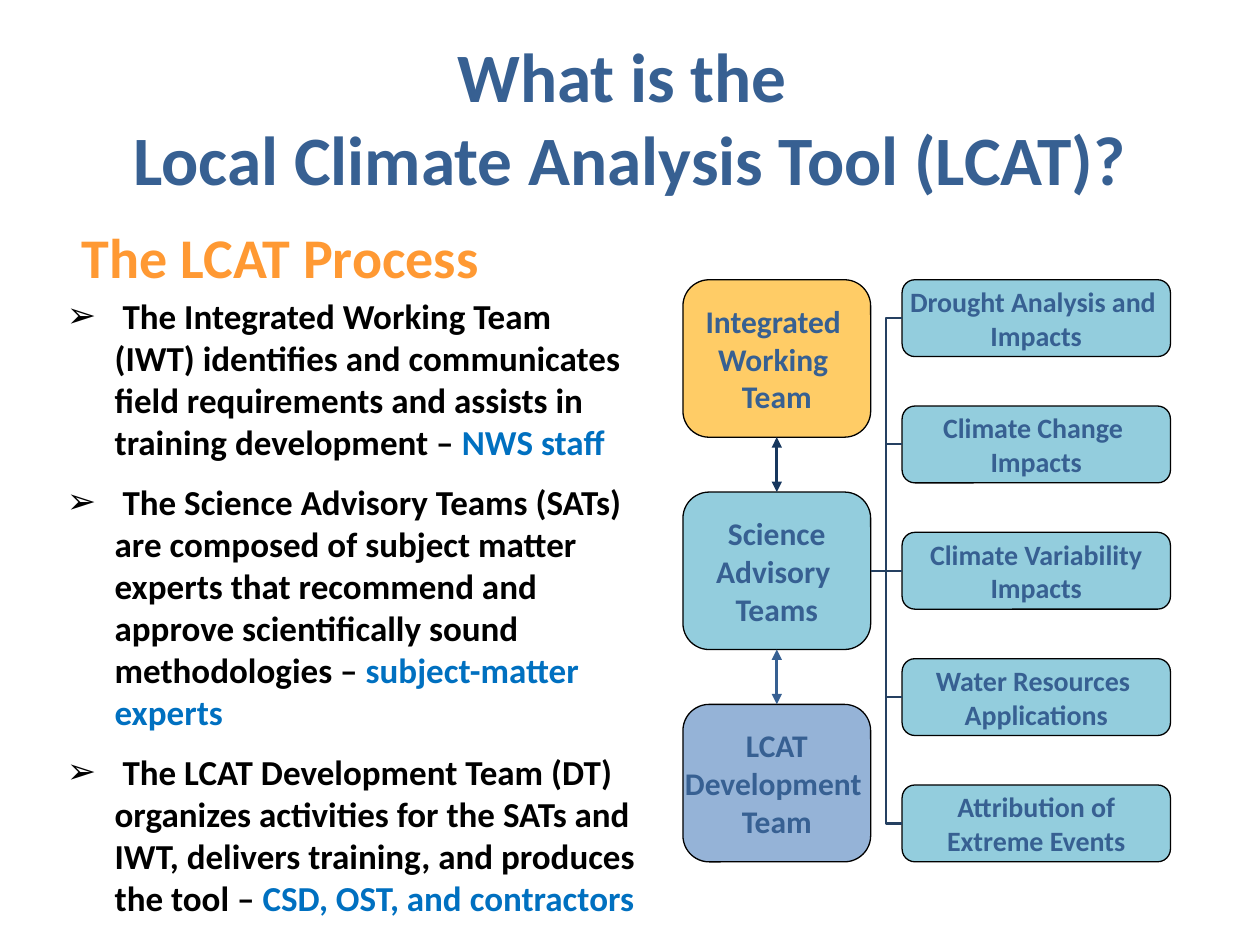
from dataclasses import dataclass

from lxml import etree
from pptx import Presentation
from pptx.dml.color import RGBColor
from pptx.enum.shapes import MSO_CONNECTOR, MSO_SHAPE
from pptx.enum.text import MSO_ANCHOR, MSO_AUTO_SIZE, PP_ALIGN
from pptx.oxml.ns import qn
from pptx.util import Inches, Pt

BOX = MSO_SHAPE.FLOWCHART_ALTERNATE_PROCESS
STRAIGHT = MSO_CONNECTOR.STRAIGHT
ELBOW = MSO_CONNECTOR.ELBOW
CENTER = PP_ALIGN.CENTER
LEFT = PP_ALIGN.LEFT
TOP = MSO_ANCHOR.TOP
MIDDLE = MSO_ANCHOR.MIDDLE
GROW = MSO_AUTO_SIZE.SHAPE_TO_FIT_TEXT
FIXED = MSO_AUTO_SIZE.NONE
TOP_SITE, LEFT_SITE, BOTTOM_SITE, RIGHT_SITE = range(4)


@dataclass(frozen=True)
class Theme:
    font: str = "Calibri"
    navy: str = "376092"
    orange: str = "FF9933"
    black: str = "000000"
    accent: str = "0070C0"
    gold: str = "FFCC66"
    aqua: str = "93CDDD"
    periwinkle: str = "95B3D7"
    arrow_dark: str = "17375E"
    branch: str = "254061"
    title_size: float = 39.6
    heading_size: float = 32
    body_size: float = 20
    team_size: float = 18
    topic_size: float = 16
    outline_width: float = 0.75
    branch_width: float = 1.25
    arrow_width: float = 1.5


def apply(target, values):
    for name, value in values.items():
        setattr(target, name, value)


class SlideBuilder:
    def __init__(self, slide, theme):
        self.slide = slide
        self.theme = theme
        self.tight = {
            "margin_left": Inches(0.03), "margin_right": Inches(0.03),
            "margin_top": Inches(0.01), "margin_bottom": Inches(0.01),
            "word_wrap": True, "auto_size": GROW, "vertical_anchor": TOP,
        }

    def place(self, shape, left, top, width, height):
        apply(shape, {"left": Inches(left), "top": Inches(top),
                      "width": Inches(width), "height": Inches(height)})

    def add_text(self, paragraph, text, size, color):
        run = paragraph.add_run()
        run.text = text
        apply(run.font, {"name": self.theme.font, "size": Pt(size), "bold": True})
        run.font.color.rgb = RGBColor.from_string(color)

    def title(self, lines, *bounds):
        shape = self.slide.shapes.title
        self.place(shape, *bounds)
        apply(shape.text_frame, {"vertical_anchor": MIDDLE, "auto_size": FIXED})
        paragraph = shape.text_frame.paragraphs[0]
        paragraph.alignment = CENTER
        for index, line in enumerate(lines):
            if index:
                paragraph.add_line_break()
            self.add_text(paragraph, line, self.theme.title_size, self.theme.navy)

    def heading(self, text, *bounds):
        shape = self.slide.shapes.add_textbox(*map(Inches, bounds))
        apply(shape.text_frame, self.tight)
        self.add_text(shape.text_frame.paragraphs[0], text,
                      self.theme.heading_size, self.theme.orange)

    def bullets(self, items, *bounds):
        shape = self.slide.placeholders[1]
        self.place(shape, *bounds)
        frame = shape.text_frame
        apply(frame, self.tight)
        for index, (duty, members) in enumerate(items):
            paragraph = frame.add_paragraph() if index else frame.paragraphs[0]
            apply(paragraph, {"alignment": LEFT, "space_before": Pt(10)})
            properties = paragraph._p.get_or_add_pPr()
            properties.set("marL", str(Inches(0.38)))
            properties.set("indent", str(Inches(-0.38)))
            etree.SubElement(properties, qn("a:buChar")).set("char", "➢")
            self.add_text(paragraph, duty, self.theme.body_size, self.theme.black)
            self.add_text(paragraph, members, self.theme.body_size, self.theme.accent)

    def box(self, lines, fill, size, *bounds):
        shape = self.slide.shapes.add_shape(BOX, *map(Inches, bounds))
        shape.shadow.inherit = False
        shape.fill.solid()
        shape.fill.fore_color.rgb = RGBColor.from_string(fill)
        shape.line.color.rgb = RGBColor.from_string(self.theme.black)
        shape.line.width = Pt(self.theme.outline_width)
        frame = shape.text_frame
        apply(frame, {"word_wrap": False, "vertical_anchor": MIDDLE})
        for index, line in enumerate(lines):
            paragraph = frame.add_paragraph() if index else frame.paragraphs[0]
            paragraph.alignment = CENTER
            self.add_text(paragraph, line, size, self.theme.navy)
        return shape

    def column(self, entries, size, left, top, width, height, bottom):
        pitch = (bottom - top - height) / (len(entries) - 1)
        return [self.box(lines, fill, size, left, top + index * pitch, width, height)
                for index, (lines, fill) in enumerate(entries)]

    def connect(self, kind, start, end, color, width, arrows=False):
        connector = self.slide.shapes.add_connector(kind, 0, 0, 0, 0)
        connector.begin_connect(*start)
        connector.end_connect(*end)
        connector.line.color.rgb = RGBColor.from_string(color)
        connector.line.width = Pt(width)
        properties = connector._element.spPr
        if arrows:
            for tag in ("a:headEnd", "a:tailEnd"):
                etree.SubElement(properties.find(qn("a:ln")), qn(tag)).set("type", "triangle")
        etree.SubElement(properties, qn("a:effectLst"))


def main():
    theme = Theme()
    presentation = Presentation()
    apply(presentation, {"slide_width": Inches(10), "slide_height": Inches(7.5)})
    slide = presentation.slides.add_slide(presentation.slide_layouts[1])
    builder = SlideBuilder(slide, theme)

    builder.title(["What is the ", "Local Climate Analysis Tool (LCAT)?"], 0.5, 0.3, 9, 1.25)
    builder.bullets([
        (" The Integrated Working Team (IWT) identifies and communicates field "
         "requirements and assists in training development – ", "NWS staff"),
        (" The Science Advisory Teams (SATs) are composed of subject matter experts "
         "that recommend and approve scientifically sound methodologies – ",
         "subject-matter experts"),
        (" The LCAT Development Team (DT) organizes activities for the SATs and IWT, "
         "delivers training, and produces the tool – ", "CSD, OST, and contractors"),
    ], 0.5, 2.33, 4.58, 5.08)
    builder.heading("The LCAT Process", 0.62, 1.76, 4.38, 0.56)

    teams = builder.column([
        (["Integrated ", "Working ", "Team"], theme.gold),
        (["Science", "Advisory ", "Teams"], theme.aqua),
        (["LCAT", "Development ", "Team"], theme.periwinkle),
    ], theme.team_size, 5.42, 2.22, 1.49, 1.25, 6.84)
    topics = builder.column([(lines, theme.aqua) for lines in (
        ["Drought Analysis and ", "Impacts"],
        ["Climate Change ", "Impacts"],
        ["Climate Variability", "Impacts"],
        ["Water Resources ", "Applications"],
        ["Attribution of", "Extreme Events"],
    )], theme.topic_size, 7.16, 2.22, 2.13, 0.61, 6.84)

    for upper, lower, color in zip(teams, teams[1:], (theme.arrow_dark, theme.navy)):
        builder.connect(STRAIGHT, (upper, BOTTOM_SITE), (lower, TOP_SITE),
                        color, theme.arrow_width, arrows=True)
    science = teams[1]
    middle = len(topics) // 2
    for index, topic in enumerate(topics):
        builder.connect(STRAIGHT if index == middle else ELBOW,
                        (science, RIGHT_SITE), (topic, LEFT_SITE),
                        theme.branch, theme.branch_width)

    presentation.save("out.pptx")


if __name__ == "__main__":
    main()
